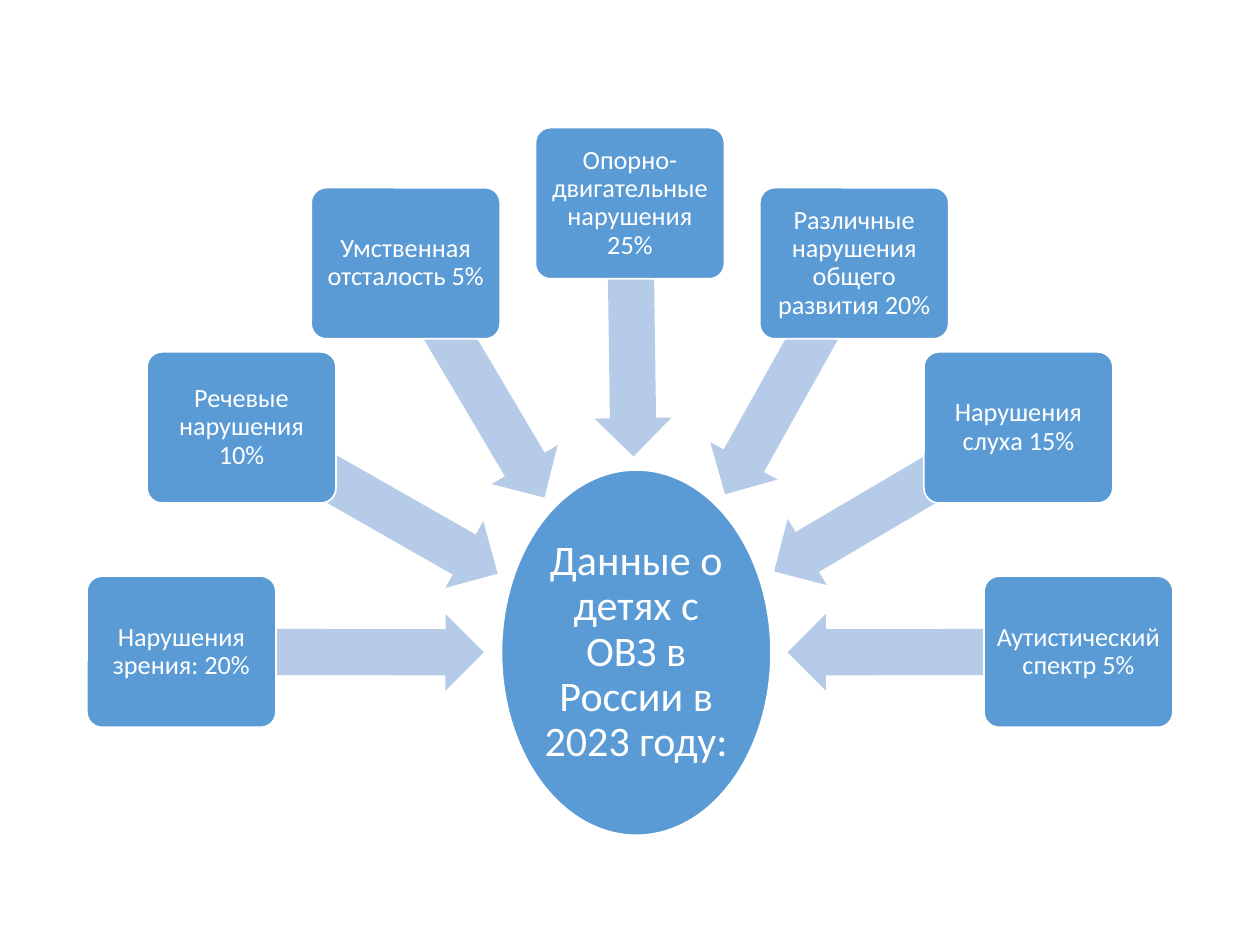
import math
from dataclasses import dataclass

from pptx import Presentation
from pptx import util as u
from pptx.dml.color import RGBColor
from pptx.enum import shapes, text

# The slide is a grid of 100 columns by 75 rows, each cell a tenth of an inch
COLUMNS, ROWS = 100, 75
CELL = u.Inches(0.1)

BLUE, PALE_BLUE, WHITE = "5B9BD5", "B5CBE7", "FFFFFF"
FONT = "Calibri"

FAN_CENTER = (50, 51.73)
FAN_RADIUS = 35.6
BOX_SIZE = (15, 12)
HUB_CENTER = (50.5, 51.8)
HUB_SIZE = (21.4, 29)
ARROW_HEIGHT = 6.1


@dataclass(frozen=True)
class Category:
    label: str
    arrow_length: float  # in grid cells, from the middle of the box


CATEGORIES = (
    Category("Нарушения зрения: 20%", 24),
    Category("Речевые нарушения 10%", 23.4),
    Category("Умственная отсталость 5%", 21.6),
    Category("Опорно-двигательные нарушения 25%", 20.1),
    Category("Различные нарушения общего развития 20%", 21),
    Category("Нарушения слуха 15%", 22.5),
    Category("Аутистический спектр 5%", 23.1),
)


def color(value: str) -> RGBColor:
    return RGBColor.from_string(value)


def add_centered(slide, kind, center: tuple, size: tuple, fill: str):
    """Add a filled shape around a point of the grid."""
    (x, y), (width, height) = center, size
    shape = slide.shapes.add_shape(
        kind, *(round(n * CELL) for n in (x - width / 2, y - height / 2, width, height))
    )
    shape.shadow.inherit = False
    shape.fill.solid()
    shape.fill.fore_color.rgb = color(fill)
    shape.line.fill.background()
    return shape


def outline(shape) -> None:
    shape.line.color.rgb = color(WHITE)
    shape.line.width = u.Pt(1)


def write(shape, label: str, size: float, inset: float) -> None:
    frame = shape.text_frame
    frame.word_wrap = True
    frame.vertical_anchor = text.MSO_ANCHOR.MIDDLE
    frame.margin_left = frame.margin_right = u.Inches(inset)
    frame.margin_top = frame.margin_bottom = u.Inches(inset)
    paragraph = frame.paragraphs[0]
    paragraph.alignment = text.PP_ALIGN.CENTER
    paragraph.line_spacing = 0.9
    run = paragraph.add_run()
    run.text = label
    run.font.name = FONT
    run.font.size = u.Pt(size)
    run.font.color.rgb = color(WHITE)


def add_hub(slide, label: str) -> None:
    hub = add_centered(slide, shapes.MSO_SHAPE.OVAL, HUB_CENTER, HUB_SIZE, BLUE)
    outline(hub)
    write(hub, label, 24, 0.02)


def add_arrow(slide, start: tuple, length: float) -> None:
    """Add an arrow from a point of the grid towards the hub."""
    x, y = start
    aim = math.atan2(HUB_CENTER[1] - y, HUB_CENTER[0] - x)
    center = (x + length / 2 * math.cos(aim), y + length / 2 * math.sin(aim))
    arrow = add_centered(
        slide, shapes.MSO_SHAPE.LEFT_ARROW, center, (length, ARROW_HEIGHT), PALE_BLUE
    )
    arrow.adjustments[0] = 0.6
    arrow.adjustments[1] = 0.5
    arrow.rotation = round(math.degrees(aim) + 180, 1)


def add_category(slide, category: Category, angle: float) -> None:
    center = (
        FAN_CENTER[0] - FAN_RADIUS * math.cos(angle),
        FAN_CENTER[1] - FAN_RADIUS * math.sin(angle),
    )
    add_arrow(slide, center, category.arrow_length)
    box = add_centered(
        slide, shapes.MSO_SHAPE.ROUNDED_RECTANGLE, center, BOX_SIZE, BLUE
    )
    box.adjustments[0] = 0.1
    outline(box)
    write(box, category.label, 15, 0.03)


def main() -> None:
    presentation = Presentation()
    presentation.slide_width = COLUMNS * CELL
    presentation.slide_height = ROWS * CELL
    slide = presentation.slides.add_slide(presentation.slide_layouts[6])

    # Hub, then the categories spread evenly over a half circle
    add_hub(slide, "Данные о детях с ОВЗ в России в 2023 году:")
    step = math.pi / (len(CATEGORIES) - 1)
    for index, category in enumerate(CATEGORIES):
        add_category(slide, category, index * step)

    presentation.save("out.pptx")


if __name__ == "__main__":
    main()
